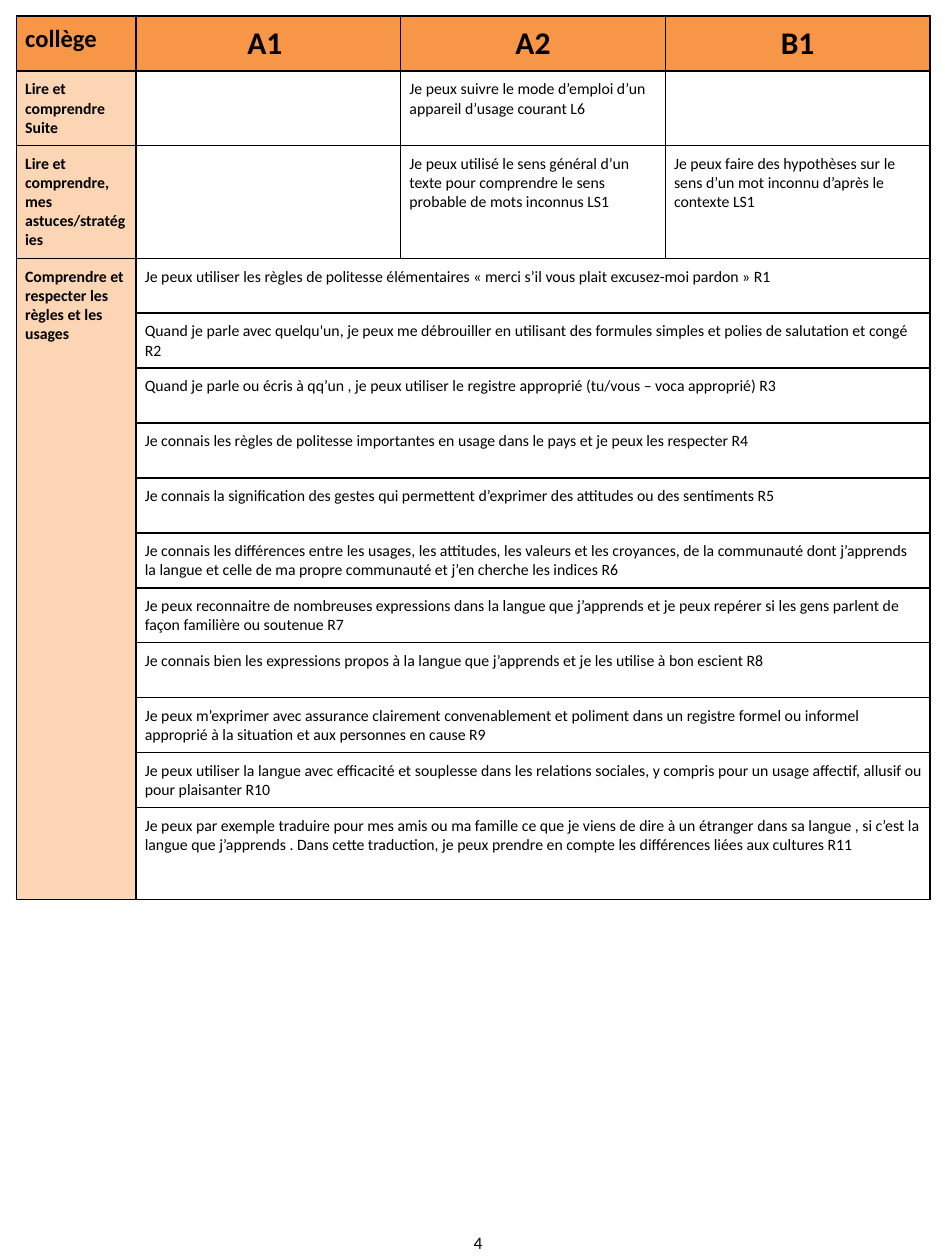
from dataclasses import dataclass

from lxml import etree
from pptx import Presentation
from pptx import util as u
from pptx.dml.color import RGBColor
from pptx.enum import text
from pptx.oxml.ns import qn


@dataclass(frozen=True)
class Theme:
    font: str = "Calibri"
    ink: str = "000000"
    header: str = "F79646"
    label: str = "FCD5B5"
    paper: str = "FFFFFF"
    body: int = 9
    number: int = 10
    corner: int = 14
    level: int = 18
    border: int = 1
    inset: float = 0.07
    inset_bottom: float = 0.06


THEME = Theme()
GRID_COLUMNS, GRID_ROWS = 75, 100
TABLE_LEFT = 1.3
COLUMNS = [9.5, 21, 21, 21]

LEVELS = ["collège", "A1 ", "A2", "B1"]
READING = [
    ["Lire et comprendre\nSuite", "",
     "Je peux suivre le mode d’emploi d’un appareil d’usage courant L6", ""],
    ["Lire et comprendre, mes astuces/stratégies", "",
     "Je peux utilisé le sens général d’un texte pour comprendre le sens probable de mots inconnus LS1",
     "Je peux faire des hypothèses sur le sens d’un mot inconnu d’après le contexte LS1"],
]
RULES_LABEL = "Comprendre et respecter les règles et les usages"
RULES = [
    "Je peux utiliser les règles de politesse élémentaires « merci s’il vous plait excusez-moi pardon » R1",
    "Quand je parle avec quelqu'un, je peux me débrouiller en utilisant des formules simples et polies de salutation et congé R2",
    "Quand je parle ou écris à qq’un , je peux utiliser le registre approprié (tu/vous – voca approprié) R3",
    "Je connais les règles de politesse importantes en usage dans le pays et je peux les respecter R4",
    "Je connais la signification des gestes qui permettent d’exprimer des attitudes ou des sentiments R5",
    "Je connais les différences entre les usages, les attitudes, les valeurs et les croyances, de la communauté dont j’apprends la langue et celle de ma propre communauté et j’en cherche les indices R6",
    "Je peux reconnaitre de nombreuses expressions dans la langue que j’apprends et je peux repérer si les gens parlent de façon familière ou soutenue R7",
    "Je connais bien les expressions propos à la langue que j’apprends et je les utilise à bon escient R8",
    "Je peux m’exprimer avec assurance clairement convenablement et poliment dans un registre formel ou informel approprié à la situation et aux personnes en cause R9",
    "Je peux utiliser la langue avec efficacité et souplesse dans les relations sociales, y compris pour un usage affectif, allusif ou pour plaisanter R10",
    "Je peux par exemple traduire pour mes amis ou ma famille ce que je viens de dire à un étranger dans sa langue , si c’est la langue que j’apprends . Dans cette traduction, je peux prendre en compte les différences liées aux cultures R11",
]


class PageBuilder:
    """Places styled elements on one page, measured in grid columns and rows."""

    def __init__(self, deck, theme):
        self.theme = theme
        self.column = deck.slide_width / GRID_COLUMNS
        self.row = deck.slide_height / GRID_ROWS
        self.page = deck.slides.add_slide(deck.slide_layouts[6])

    def area(self, left, top, width, height):
        return (round(left * self.column), round(top * self.row),
                round(width * self.column), round(height * self.row))

    def set_words(self, frame, words, size, bold=False, centred=False):
        frame.word_wrap = True
        frame.text = words
        for para in frame.paragraphs:
            para.alignment = text.PP_ALIGN.CENTER if centred else text.PP_ALIGN.LEFT
            font = para.font
            font.name, font.size, font.bold = self.theme.font, u.Pt(size), bold
            font.color.rgb = RGBColor.from_string(self.theme.ink)

    def table(self, top, rows):
        box = self.page.shapes.add_table(
            len(rows), len(COLUMNS),
            *self.area(TABLE_LEFT, top, sum(COLUMNS), sum(rows)))
        grid = box.table
        grid.first_row = grid.horz_banding = False
        for column, width in zip(grid.columns, COLUMNS):
            column.width = round(width * self.column)
        for row, height in zip(grid.rows, rows):
            row.height = round(height * self.row)
        for cell in grid.iter_cells():
            self.style(cell)
        return grid

    def style(self, cell):
        inset = u.Inches(self.theme.inset)
        cell.margin_left = cell.margin_right = cell.margin_top = inset
        cell.margin_bottom = u.Inches(self.theme.inset_bottom)
        properties = cell._tc.get_or_add_tcPr()
        for side in ("a:lnL", "a:lnR", "a:lnT", "a:lnB"):
            line = etree.SubElement(properties, qn(side),
                                    w=str(u.Pt(self.theme.border)))
            fill = etree.SubElement(line, qn("a:solidFill"))
            etree.SubElement(fill, qn("a:srgbClr"), val=self.theme.ink)
        self.paint(cell, self.theme.paper)

    def paint(self, cell, colour):
        cell.fill.solid()
        cell.fill.fore_color.rgb = RGBColor.from_string(colour)

    def header(self, cell, words, size, centred):
        self.paint(cell, self.theme.header)
        self.set_words(cell.text_frame, words, size, True, centred)

    def label(self, cell, words):
        self.paint(cell, self.theme.label)
        self.set_words(cell.text_frame, words, self.theme.body, True)

    def statement(self, cell, words):
        if words:
            self.set_words(cell.text_frame, words, self.theme.body)

    def page_number(self, number, left, top, width, height):
        box = self.page.shapes.add_textbox(*self.area(left, top, width, height))
        self.set_words(box.text_frame, number, self.theme.number, centred=True)


def main():
    deck = Presentation()
    deck.slide_width, deck.slide_height = u.Inches(7.5), u.Inches(10)
    builder = PageBuilder(deck, THEME)

    # Levels and reading skills
    reading = builder.table(1.25, [4.4, 5.9, 9])
    for index, level in enumerate(LEVELS):
        size = THEME.level if index else THEME.corner
        builder.header(reading.cell(0, index), level, size, index > 0)
    for row, (label, *statements) in enumerate(READING, 1):
        builder.label(reading.cell(row, 0), label)
        for column, words in enumerate(statements, 1):
            builder.statement(reading.cell(row, column), words)

    # Page number
    builder.page_number("4", 2.1, 97.3, 71.7, 2.7)

    # Rules and customs, each across all three levels
    rules = builder.table(20.5, [4.36] * (len(RULES) - 1) + [7.3])
    rules.cell(0, 0).merge(rules.cell(len(RULES) - 1, 0))
    builder.label(rules.cell(0, 0), RULES_LABEL)
    for row, words in enumerate(RULES):
        rules.cell(row, 1).merge(rules.cell(row, 3))
        builder.statement(rules.cell(row, 1), words)

    deck.save("out.pptx")


if __name__ == "__main__":
    main()
